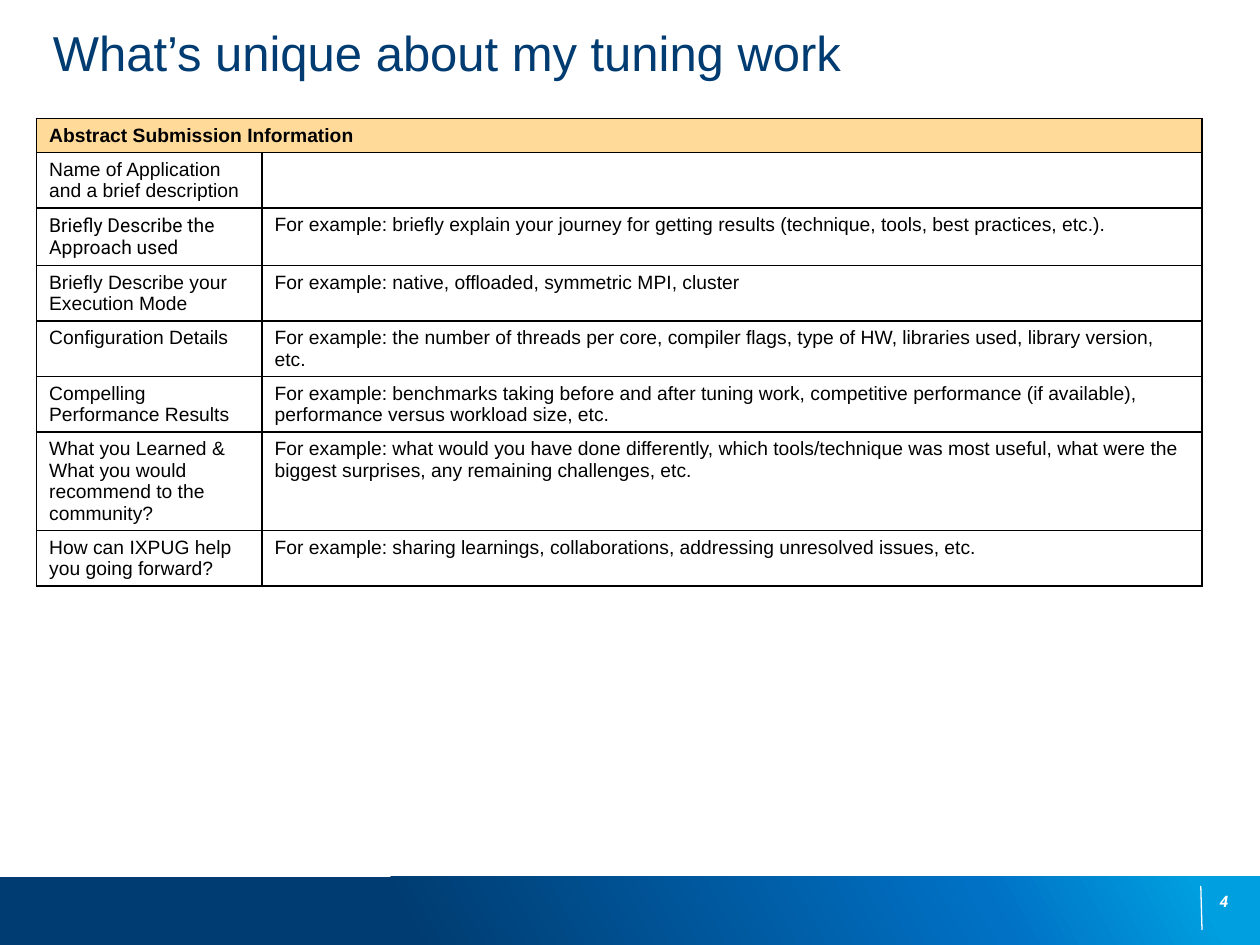
from copy import deepcopy

from lxml import etree
from pptx import Presentation
from pptx.dml.color import RGBColor
from pptx.enum.shapes import MSO_CONNECTOR, MSO_SHAPE
from pptx.enum.text import MSO_ANCHOR, PP_ALIGN
from pptx.oxml.ns import qn
from pptx.util import Inches, Pt

TITLE = "What’s unique about my tuning work"
HEADER = "Abstract Submission Information"
PAGE_NUMBER = "4"
# Question, answer hint, number of text lines, font of the question
ROWS = [
    ("Name of Application and a brief description", "", 2, "Arial"),
    ("Briefly Describe the Approach used",
     "For example: briefly explain your journey for getting results "
     "(technique, tools, best practices, etc.).", 2, "Roboto"),
    ("Briefly Describe your Execution Mode",
     "For example: native, offloaded, symmetric MPI, cluster", 2, "Arial"),
    ("Configuration Details",
     "For example: the number of threads per core, compiler flags, type of HW, "
     "libraries used, library version, etc.", 2, "Arial"),
    ("Compelling Performance Results",
     "For example: benchmarks taking before and after tuning work, competitive "
     "performance (if available), performance versus workload size, etc.", 2, "Arial"),
    ("What you Learned & What you would recommend to the community?",
     "For example: what would you have done differently, which tools/technique was "
     "most useful, what were the biggest surprises, any remaining challenges, etc.",
     4, "Arial"),
    ("How can IXPUG help you going forward?",
     "For example: sharing learnings, collaborations, addressing unresolved "
     "issues, etc.", 2, "Arial"),
]
COLUMN_WIDTHS = (1.79, 7.46)
LINE_HEIGHT, CELL_PADDING = 0.17, 0.1
BAR_TOP = 6.96
BAR_STOPS = [("003C71", 0.32), ("0071C5", 0.78), ("009FDF", 0.95)]


def color(value):
    return RGBColor.from_string(value)


def box(*lengths):
    return [Inches(length) for length in lengths]


def style(paragraph, size, font_name, font_color, bold=False, italic=False):
    font = paragraph.font
    font.size, font.name = Pt(size), font_name
    font.bold, font.italic = bold, italic
    font.color.rgb = color(font_color)


def add_borders(cell):
    properties = cell._tc.get_or_add_tcPr()
    for index, side in enumerate(("lnL", "lnR", "lnT", "lnB")):
        line = etree.Element(qn(f"a:{side}"), w=str(Pt(1)))
        fill = etree.SubElement(line, qn("a:solidFill"))
        etree.SubElement(fill, qn("a:srgbClr"), val="000000")
        properties.insert(index, line)


def fill_cell(cell, text, font_name="Arial", bold=False, fill=None):
    cell.text = text
    style(cell.text_frame.paragraphs[0], 11, font_name, "000000", bold)
    if fill:
        cell.fill.solid()
        cell.fill.fore_color.rgb = color(fill)
    else:
        cell.fill.background()
    add_borders(cell)


presentation = Presentation()
presentation.slide_width, presentation.slide_height = box(10, 7.5)
slide = presentation.slides.add_slide(presentation.slide_layouts[5])
shapes = slide.shapes

# Footer bar with a three-stop gradient
bar = shapes.add_shape(MSO_SHAPE.RECTANGLE, *box(0, BAR_TOP, 10, 0.56))
bar.shadow.inherit = False
bar.line.fill.background()
bar.fill.gradient()
bar.fill.gradient_angle = 29
stop_list = bar.fill._fill._gradFill.find(qn("a:gsLst"))
stop_list.append(deepcopy(stop_list[-1]))
for stop, (stop_color, position) in zip(bar.fill.gradient_stops, BAR_STOPS):
    stop.color.rgb = color(stop_color)
    stop.position = position

# Divider beside the page number
divider = shapes.add_connector(MSO_CONNECTOR.STRAIGHT, *box(9.53, 7.03, 9.54, 7.38))
divider.line.color.rgb = color("FFFFFF")
divider.line.width = Pt(0.75)
etree.SubElement(divider._element.spPr, qn("a:effectLst"))

# Title
title = shapes.title
title.left, title.top, title.width, title.height = box(0.42, 0.17, 9, 0.55)
frame = title.text_frame
frame.text = TITLE
frame.margin_left = frame.margin_right = frame.margin_top = frame.margin_bottom = 0
frame.vertical_anchor = MSO_ANCHOR.MIDDLE
paragraph = frame.paragraphs[0]
paragraph.alignment = PP_ALIGN.LEFT
paragraph.line_spacing = 0.9
style(paragraph, 28, "Arial", "003C71")

# Table: a merged header, then one row per question
heights = [lines * LINE_HEIGHT + CELL_PADDING for lines in [1] + [row[2] for row in ROWS]]
table = shapes.add_table(len(heights), len(COLUMN_WIDTHS),
                         *box(0.29, 0.94, sum(COLUMN_WIDTHS), sum(heights))).table
table.horz_banding = False
for column, width in zip(table.columns, COLUMN_WIDTHS):
    column.width = Inches(width)
for row, height in zip(table.rows, heights):
    row.height = Inches(height)

table.cell(0, 0).merge(table.cell(0, 1))
fill_cell(table.cell(0, 0), HEADER, bold=True, fill="FFDA99")
add_borders(table.cell(0, 1))
for index, (question, hint, _, font_name) in enumerate(ROWS, start=1):
    fill_cell(table.cell(index, 0), question, font_name)
    fill_cell(table.cell(index, 1), hint)

# Page number
number = shapes.add_textbox(*box(9.58, 7.03, 0.27, 0.4))
number.text_frame.text = PAGE_NUMBER
number.text_frame.word_wrap = True
paragraph = number.text_frame.paragraphs[0]
paragraph.alignment = PP_ALIGN.CENTER
style(paragraph, 9, "Roboto", "FFFFFF", bold=True, italic=True)

presentation.save("out.pptx")
